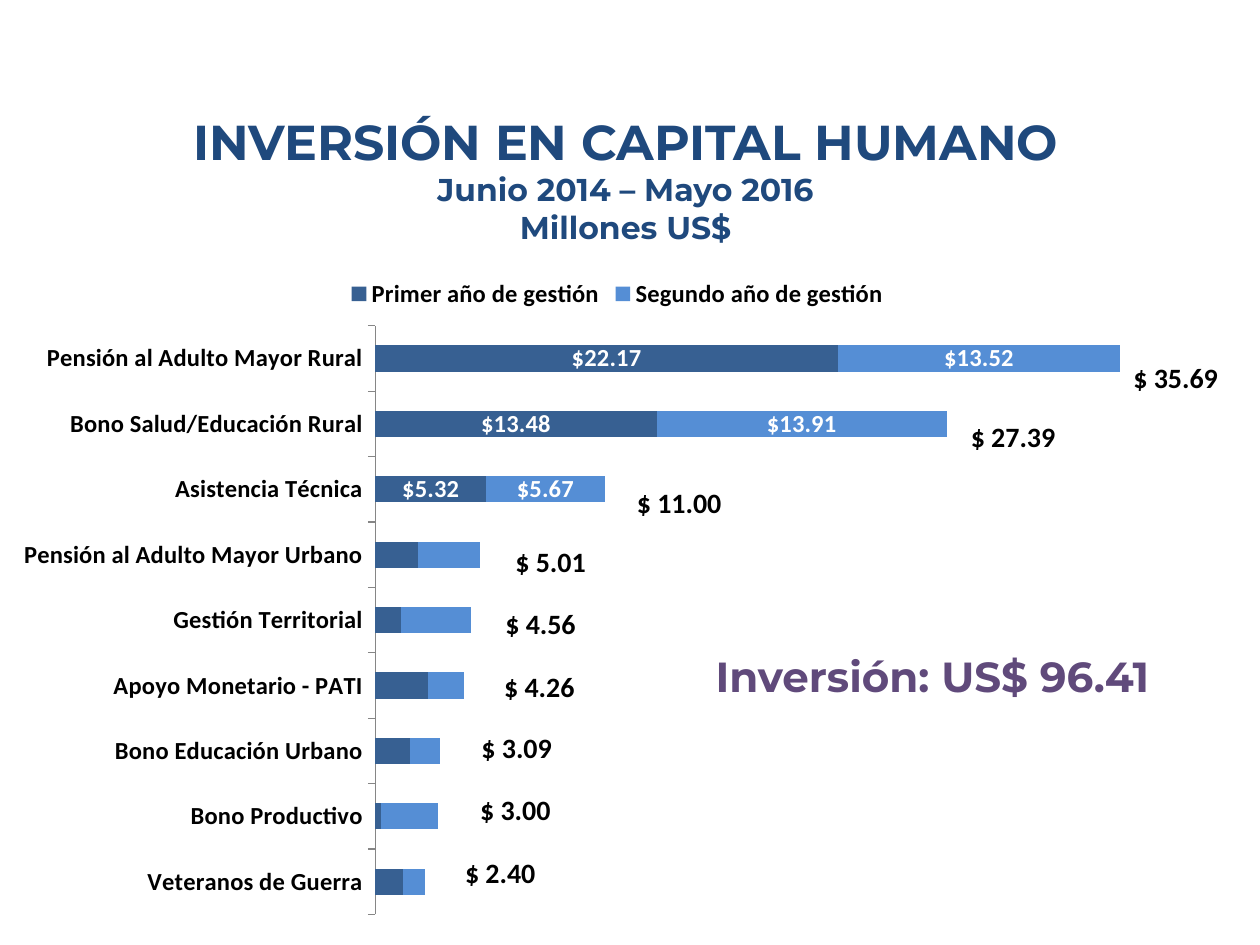
from pptx import Presentation
from pptx.chart.data import CategoryChartData
from pptx.dml.color import RGBColor
from pptx.enum.chart import XL_CHART_TYPE, XL_LEGEND_POSITION, XL_TICK_MARK
from pptx.enum.text import MSO_ANCHOR, PP_ALIGN
from pptx.oxml import parse_xml
from pptx.oxml.ns import nsdecls
from pptx.util import Inches, Pt

NAVY = RGBColor(0x1F, 0x49, 0x7D)
PURPLE = RGBColor(0x60, 0x4A, 0x7B)
DARK = RGBColor(0x37, 0x60, 0x92)
LIGHT = RGBColor(0x55, 0x8E, 0xD5)
GRAY = RGBColor(0x86, 0x86, 0x86)
BLACK = RGBColor(0, 0, 0)
WHITE = RGBColor(0xFF, 0xFF, 0xFF)
MONEY = "[$$-440A]#,##0.00"
LABEL_MIN = 5  # bars below this value carry no label

# Program, first year, second year, total, left and top of the total
ROWS = [
    ("Veteranos de Guerra", 1.35, 1.05, "2.40", 3.26, 6.69),
    ("Bono Productivo", 0.26, 2.74, "3.00", 3.38, 6.19),
    ("Bono Educación Urbano", 1.68, 1.41, "3.09", 3.39, 5.7),
    ("Apoyo Monetario - PATI", 2.52, 1.74, "4.26", 3.57, 5.21),
    ("Gestión Territorial", 1.22, 3.34, "4.56", 3.58, 4.71),
    ("Pensión al Adulto Mayor Urbano", 2.03, 2.98, "5.01", 3.66, 4.22),
    ("Asistencia Técnica", 5.32, 5.67, "11.00", 4.68, 3.75),
    ("Bono Salud/Educación Rural", 13.48, 13.91, "27.39", 7.33, 3.23),
    ("Pensión al Adulto Mayor Rural", 22.17, 13.52, "35.69", 8.62, 2.76),
]


def set_font(font, size, color, bold=True, name="Calibri"):
    font.size, font.bold, font.name = Pt(size), bold, name
    font.color.rgb = color


def add_text(slide, lines, box, sizes, color=BLACK, name="Calibri", bottom=0.05):
    """Add centred lines, each with its own size."""
    frame = slide.shapes.add_textbox(*map(Inches, box)).text_frame
    frame.word_wrap = True
    frame.vertical_anchor = MSO_ANCHOR.MIDDLE
    frame.margin_bottom = Inches(bottom)
    for i, (line, size) in enumerate(zip(lines, sizes)):
        para = frame.add_paragraph() if i else frame.paragraphs[0]
        para.alignment = PP_ALIGN.CENTER
        run = para.add_run()
        run.text = line
        set_font(run.font, size, color, name=name)


def style_series(series, color):
    series.format.fill.solid()
    series.format.fill.fore_color.rgb = color
    labels = series.data_labels
    labels.show_value = True
    labels.number_format = MONEY
    labels.number_format_is_linked = False
    set_font(labels.font, 14, WHITE)
    small = [i for i, value in enumerate(series.values) if value < LABEL_MIN]
    for pos, i in enumerate(small):
        labels._element.insert(pos, parse_xml(
            f'<c:dLbl {nsdecls("c")}><c:idx val="{i}"/>'
            '<c:delete val="1"/></c:dLbl>'))


def set_layout(chart, **parts):
    """Fix the inner plot area as fractions of the chart."""
    plot = chart._chartSpace.chart.plotArea
    for old in plot.findall("c:layout", plot.nsmap):
        plot.remove(old)
    sizes = "".join(f'<c:{key} val="{val}"/>' for key, val in parts.items())
    plot.insert(0, parse_xml(
        f'<c:layout {nsdecls("c")}><c:manualLayout>'
        '<c:layoutTarget val="inner"/><c:xMode val="edge"/>'
        f'<c:yMode val="edge"/>{sizes}</c:manualLayout></c:layout>'))


def add_bars(slide):
    data = CategoryChartData(number_format=MONEY)
    names, first, second = list(zip(*ROWS))[:3]
    data.categories = names
    data.add_series("Primer año de gestión", first)
    data.add_series("Segundo año de gestión", second)
    box = map(Inches, (0, 2.1, 9.8, 5.28))
    chart = slide.shapes.add_chart(XL_CHART_TYPE.BAR_STACKED, *box, data).chart
    set_font(chart.font, 10, BLACK, bold=False)
    chart.has_title = False
    chart.has_legend = True
    chart.legend.position = XL_LEGEND_POSITION.TOP
    chart.legend.include_in_layout = False
    set_font(chart.legend.font, 14, BLACK)

    plot = chart.plots[0]
    plot.gap_width, plot.overlap = 150, 100
    plot.vary_by_categories = False
    for series, color in zip(plot.series, (DARK, LIGHT)):
        style_series(series, color)

    axis = chart.category_axis
    axis.major_tick_mark = XL_TICK_MARK.OUTSIDE
    axis.format.line.color.rgb = GRAY
    set_font(axis.tick_labels.font, 14, BLACK)
    scale = chart.value_axis
    scale.minimum_scale, scale.maximum_scale = 0, 40
    scale.has_major_gridlines = False
    scale.visible = False
    set_layout(chart, x=0.304, y=0.092, w=0.676, h=0.885)


def main():
    deck = Presentation()
    deck.slide_width, deck.slide_height = Inches(10), Inches(7.5)
    slide = deck.slides.add_slide(deck.slide_layouts[6])
    add_bars(slide)
    title = ["INVERSIÓN EN CAPITAL HUMANO", "Junio 2014 – Mayo 2016",
             "Millones US$"]
    add_text(slide, title, (0.28, 1.04, 9.37, 1.06), (28, 18, 18),
             color=NAVY, name="Montserrat", bottom=0.35)
    add_text(slide, ["Inversión: US$ 96.41"], (5.39, 5.01, 4.02, 0.71), [24],
             color=PURPLE, name="Montserrat")
    for *_, total, left, top in reversed(ROWS):
        add_text(slide, [f"$ {total}"], (left, top, 1.42, 0.47), [16])
    deck.save("out.pptx")


if __name__ == "__main__":
    main()
